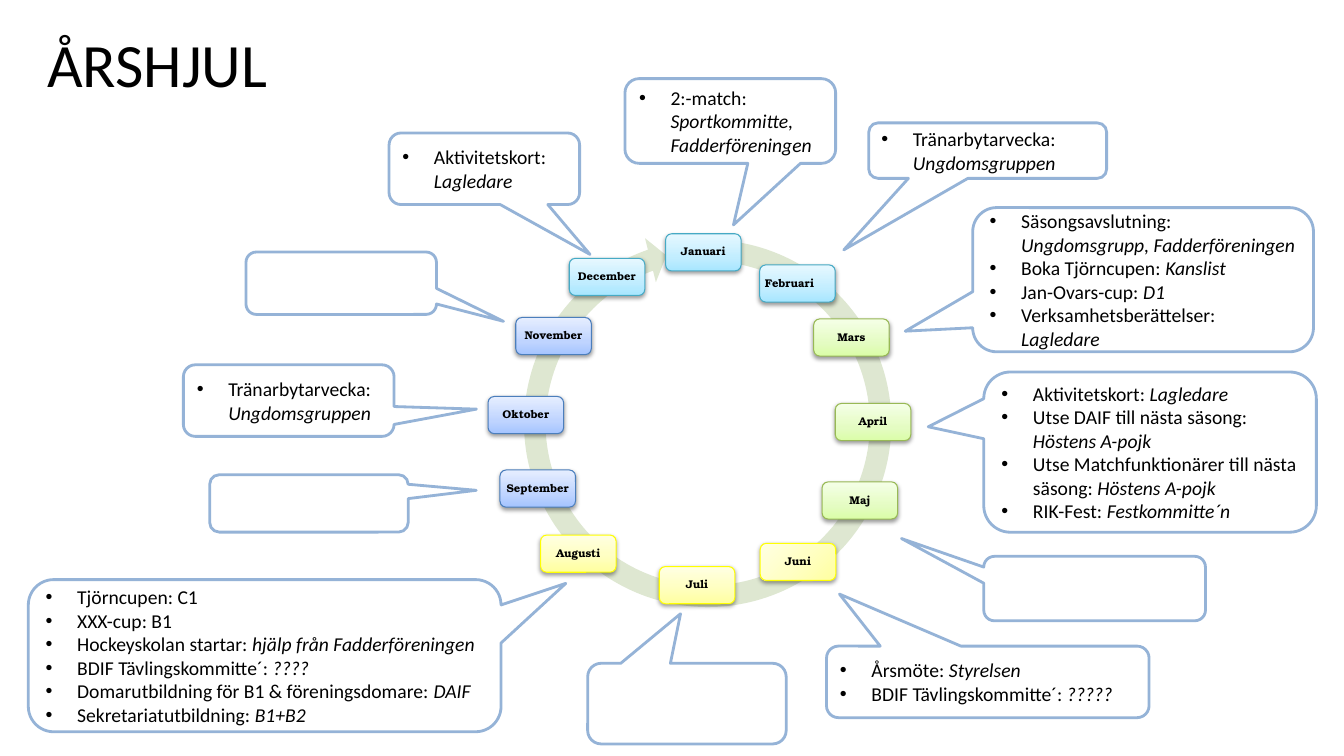
from dataclasses import dataclass

from lxml.etree import SubElement
from pptx import Presentation
from pptx.dml.color import RGBColor
from pptx.enum.shapes import MSO_SHAPE
from pptx.enum.text import MSO_ANCHOR, PP_ALIGN
from pptx.oxml import parse_xml
from pptx.oxml.ns import nsdecls, qn
from pptx.util import Pt


@dataclass(frozen=True)
class Season:
    """Border colour and gradient stops of the months in one season."""
    border: str
    stops: tuple


@dataclass(frozen=True)
class Theme:
    """Colours, fonts and type sizes of the slide."""
    text: str = "000000"
    ring: str = "DEE7D1"
    callout: str = "95B3D7"
    body_font: str = "Calibri"
    month_font: str = "TeX Gyre Bonum"
    title_size: float = 44
    body_size: float = 14
    month_size: float = 8
    winter: Season = Season("46AAC5", ((0, "A7E6FF"), (35, "C1EDFF"), (100, "E7F8FF")))
    spring: Season = Season("98B955", ((0, "DAFDA7"), (35, "E4FCC2"), (100, "F5FFE7")))
    summer: Season = Season("FFFF00", ((0, "FFFFA0"), (50, "FFFFC5"), (100, "FFFFE3")))
    autumn: Season = Season("4B7EBC", ((0, "A4C4FF"), (35, "BFD4FF"), (100, "E6EEFF")))


THEME = Theme()
MONTH_WIDTH, MONTH_HEIGHT = 54, 26.6
BULLET_INDENT = 22.5

MONTHS = [
    ("Januari", 475.4, 167, THEME.winter),
    ("Februari", 542.6, 189.2, THEME.winter),
    ("Mars", 581.2, 227.8, THEME.spring),
    ("April", 596.6, 288.2, THEME.spring),
    ("Maj", 587.2, 344.2, THEME.spring),
    ("Juni", 543, 388.1, THEME.summer),
    ("Juli", 470.9, 404.7, THEME.summer),
    ("Augusti", 386.1, 382.2, THEME.summer),
    ("September", 357.1, 335.7, THEME.autumn),
    ("Oktober", 348.6, 283.2, THEME.autumn),
    ("November", 368.4, 226.8, THEME.autumn),
    ("December", 406.6, 184.5, THEME.winter),
]

CALLOUTS = [
    ((620.6, 87.8, 169.9, 39.6), (-0.605, 1.79),
     [("Tränarbytarvecka: ", "Ungdomsgruppen")]),
    ((446.4, 56.2, 150.5, 60.5), (0.015, 1.227),
     [("2:-match: ", "Sportkommitte, Fadderföreningen")]),
    ((277.9, 95, 136.1, 51.1), (0.555, 1.198),
     [("Aktivitetskort: ", "Lagledare")]),
    ((175.7, 180, 136.1, 44.6), (0.852, 0.611), []),
    ((131, 260.6, 150.5, 51.1), (0.891, 0.119),
     [("Tränarbytarvecka: ", "Ungdomsgruppen")]),
    ((419.8, 473.8, 141.8, 57.6), (-0.032, -1.115), []),
    ((702.7, 265.7, 237.6, 114.5), (-0.667, -0.158),
     [("Aktivitetskort: ", "Lagledare"),
      ("Utse DAIF till nästa säsong: ", "Höstens A-pojk"),
      ("Utse Matchfunktionärer till nästa säsong: ", "Höstens A-pojk"),
      ("RIK-Fest: ", "Festkommitte´n")]),
    ((149.8, 339.1, 141.8, 41), (0.843, -0.228), []),
    ((694.8, 148.3, 243.4, 103), (-0.698, 0.357),
     [("Säsongsavslutning: ", "Ungdomsgrupp, Fadderföreningen"),
      ("Boka Tjörncupen: ", "Kanslist"),
      ("Jan-Ovars-cup: ", "D1"),
      ("Verksamhetsberättelser: ", "Lagledare")]),
    ((590.4, 461.5, 230.4, 51.1), (-0.46, -1.228),
     [("Årsmöte: ", "Styrelsen"),
      ("BDIF Tävlingskommitte´: ", "?????")]),
    ((702.7, 397.4, 158.4, 46.1), (-0.871, -0.776), []),
    ((20.2, 414, 337.7, 108.7), (0.637, -0.475),
     [("Tjörncupen: C1", ""),
      ("XXX-cup: B1", ""),
      ("Hockeyskolan startar: ", "hjälp från Fadderföreningen"),
      ("BDIF Tävlingskommitte´: ", "????"),
      ("Domarutbildning för B1 & föreningsdomare: ", "DAIF"),
      ("Sekretariatutbildning: ", "B1+B2")]),
]


def add_text(paragraph, text, *, size, font=THEME.body_font, bold=False, italic=False):
    """Append a formatted run to a paragraph."""
    run = paragraph.add_run()
    run.text = text
    run.font.size = Pt(size)
    run.font.name = font
    run.font.bold = bold
    run.font.italic = italic
    run.font.color.rgb = RGBColor.from_string(THEME.text)


def add_plain_shape(slide, kind, box, adjustments=()):
    """Add a preset shape without shadow, its box given in points."""
    shape = slide.shapes.add_shape(kind, *(Pt(length) for length in box))
    shape.shadow.inherit = False
    for index, value in enumerate(adjustments):
        shape.adjustments[index] = value
    return shape


def set_border(shape, color, width):
    """Give a shape a solid border."""
    shape.line.color.rgb = RGBColor.from_string(color)
    shape.line.width = Pt(width)


def set_gradient(shape, stops, angle):
    """Fill a shape with a linear gradient of any number of stops."""
    shape.fill.background()
    properties = shape.element.spPr
    marks = "".join(
        f'<a:gs pos="{position * 1000}"><a:srgbClr val="{color}"/></a:gs>'
        for position, color in stops)
    gradient = parse_xml(
        f'<a:gradFill {nsdecls("a")} rotWithShape="1"><a:gsLst>{marks}</a:gsLst>'
        f'<a:lin ang="{angle * 60000}" scaled="0"/></a:gradFill>')
    properties.replace(properties.find(qn("a:noFill")), gradient)


def add_drop_shadow(shape):
    """Put a soft shadow below a shape."""
    effects = shape.element.spPr.find(qn("a:effectLst"))
    shadow = SubElement(effects, qn("a:outerShdw"), blurRad=str(Pt(3.1)),
                        dist=str(Pt(1.6)), dir="5400000", rotWithShape="0")
    color = SubElement(shadow, qn("a:srgbClr"), val="000000")
    SubElement(color, qn("a:alpha"), val="38000")


def set_bullet(paragraph):
    """Give a paragraph a round bullet with a hanging indent."""
    properties = paragraph._p.get_or_add_pPr()
    properties.set("marL", str(Pt(BULLET_INDENT)))
    properties.set("indent", str(-Pt(BULLET_INDENT)))
    SubElement(properties, qn("a:buFont"), typeface="Arial")
    SubElement(properties, qn("a:buChar"), char="•")


def add_title(slide, text):
    """Place and write the slide title."""
    title = slide.shapes.title
    title.left, title.top, title.width, title.height = Pt(26.6), Pt(0), Pt(864), Pt(90)
    title.text_frame.vertical_anchor = MSO_ANCHOR.MIDDLE
    paragraph = title.text_frame.paragraphs[0]
    paragraph.alignment = PP_ALIGN.LEFT
    add_text(paragraph, text, size=THEME.title_size)


def add_ring(slide):
    """Add the circular arrow behind the months."""
    ring = add_plain_shape(slide, MSO_SHAPE.CIRCULAR_ARROW, (365.8, 162.7, 279.4, 279.4),
                           (0.055, 3.307, 150.402, 166.55, 0.058))
    ring.fill.solid()
    ring.fill.fore_color.rgb = RGBColor.from_string(THEME.ring)
    ring.line.fill.background()


def add_month(slide, name, left, top, season, *, angle=270, alignment=PP_ALIGN.CENTER):
    """Add one month box to the wheel."""
    month = add_plain_shape(slide, MSO_SHAPE.ROUNDED_RECTANGLE,
                            (left, top, MONTH_WIDTH, MONTH_HEIGHT))
    set_gradient(month, season.stops, angle)
    set_border(month, season.border, 0.75)
    add_drop_shadow(month)
    frame = month.text_frame
    frame.word_wrap = True
    frame.vertical_anchor = MSO_ANCHOR.MIDDLE
    frame.margin_left = frame.margin_right = frame.margin_top = frame.margin_bottom = Pt(2.4)
    paragraph = frame.paragraphs[0]
    paragraph.alignment = alignment
    paragraph.line_spacing = 0.9
    add_text(paragraph, name, size=THEME.month_size, font=THEME.month_font, bold=True)


def add_callout(slide, box, pointer, activities):
    """Add a callout listing activities and who is responsible."""
    callout = add_plain_shape(slide, MSO_SHAPE.ROUNDED_RECTANGULAR_CALLOUT, box, pointer)
    callout.fill.background()
    set_border(callout, THEME.callout, 2)
    frame = callout.text_frame
    frame.word_wrap = True
    frame.vertical_anchor = MSO_ANCHOR.MIDDLE
    for index, (activity, responsible) in enumerate(activities):
        paragraph = frame.add_paragraph() if index else frame.paragraphs[0]
        paragraph.alignment = PP_ALIGN.LEFT
        set_bullet(paragraph)
        add_text(paragraph, activity, size=THEME.body_size)
        if responsible:
            add_text(paragraph, responsible, size=THEME.body_size, italic=True)


def main():
    """Build the year wheel slide and save it."""
    presentation = Presentation()
    presentation.slide_width, presentation.slide_height = Pt(960), Pt(540)
    slide = presentation.slides.add_slide(presentation.slide_layouts[5])
    add_title(slide, "ÅRSHJUL")
    add_ring(slide)
    special_formats = {"Februari": {"alignment": PP_ALIGN.LEFT}, "Juni": {"angle": 225}}
    for name, left, top, season in MONTHS:
        add_month(slide, name, left, top, season, **special_formats.get(name, {}))
    for box, pointer, activities in CALLOUTS:
        add_callout(slide, box, pointer, activities)
    presentation.save("out.pptx")


if __name__ == "__main__":
    main()
